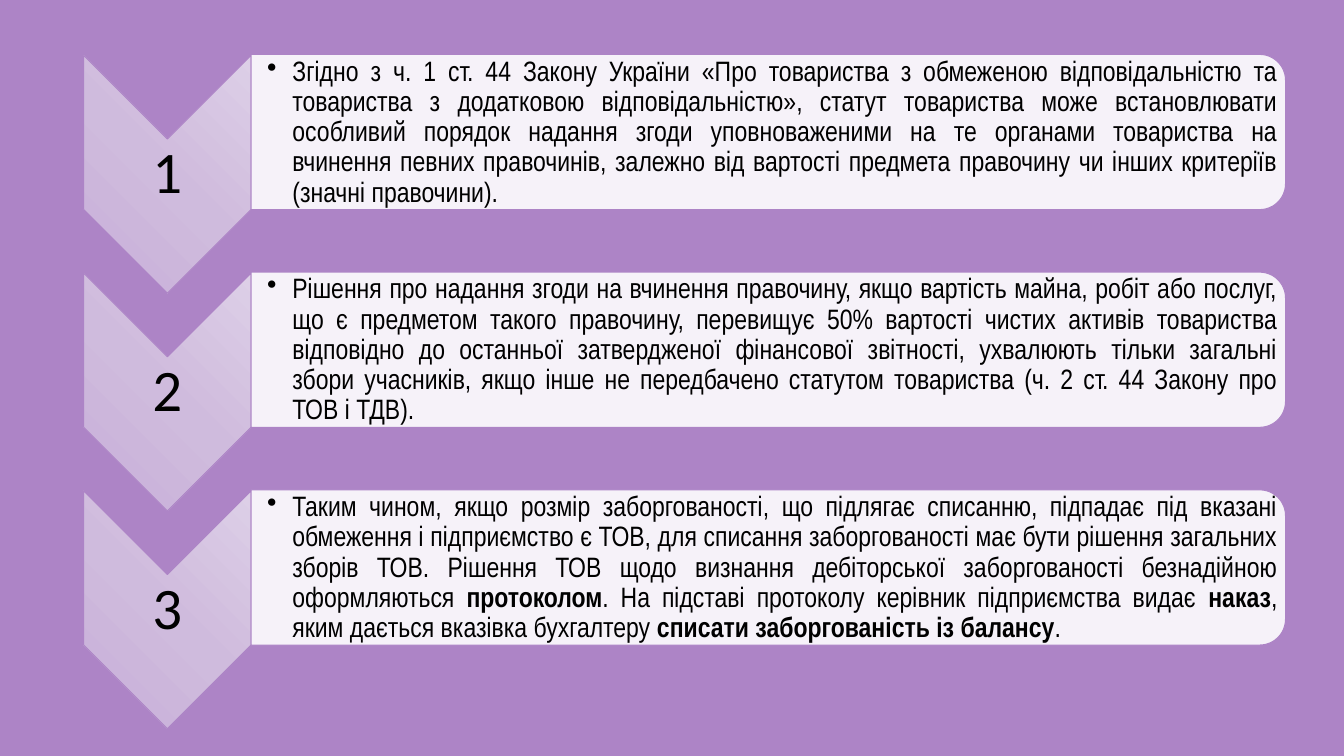
from dataclasses import dataclass

from lxml import etree
from pptx import Presentation
from pptx.dml.color import RGBColor
from pptx.enum.shapes import MSO_SHAPE as SHAPE
from pptx.enum.text import MSO_ANCHOR as ANCHOR, PP_ALIGN as ALIGN
from pptx.oxml.ns import qn
from pptx.shapes.autoshape import Shape
from pptx.slide import Slide
from pptx.util import Inches, Pt

PURPLE = RGBColor(0xAD, 0x84, 0xC6)
WHITE = RGBColor(0xFF, 0xFF, 0xFF)
BLACK = RGBColor(0x00, 0x00, 0x00)
CHEVRON_STOPS = (
    (0, RGBColor(0xDD, 0xCF, 0xE7)),
    (50, RGBColor(0xCF, 0xBB, 0xDD)),
    (100, RGBColor(0xC8, 0xAF, 0xD9)),
)
ROW_PITCH = 2.16
BOLD_MARK = "**"


@dataclass(frozen=True)
class Box:
    left: float
    top: float
    width: float
    height: float

    def emu(self, shift: float) -> tuple[int, int, int, int]:
        return (Inches(self.left), Inches(self.top + shift),
                Inches(self.width), Inches(self.height))


@dataclass(frozen=True)
class Step:
    number: str
    body: str


CHEVRON = Box(0.48, 0.9, 2.36, 1.66)
NUMBER = Box(0.83, 1.38, 1.66, 0.71)
PANEL = Box(6.85, -3.82, 1.54, 10.26)
BODY = Box(2.49, 0.62, 10.19, 1.39)

STEPS = (
    Step("1", "Згідно з ч. 1 ст. 44 Закону України «Про товариства з обмеженою "
              "відповідальністю та товариства з додатковою відповідальністю», статут "
              "товариства може встановлювати особливий порядок надання згоди "
              "уповноваженими на те органами товариства на вчинення певних правочинів, "
              "залежно від вартості предмета правочину чи інших критеріїв "
              "(значні правочини). "),
    Step("2", "Рішення про надання згоди на вчинення правочину, якщо вартість "
              "майна, робіт або послуг, що є предметом такого правочину, перевищує 50% "
              "вартості чистих активів товариства відповідно до останньої затвердженої "
              "фінансової звітності, ухвалюють тільки загальні збори учасників, якщо "
              "інше не передбачено статутом товариства (ч. 2 ст. 44 Закону про ТОВ і ТДВ)."),
    Step("3", "Таким чином, якщо розмір заборгованості, що підлягає списанню, "
              "підпадає під вказані обмеження і підприємство є ТОВ, для списання "
              "заборгованості має бути рішення загальних зборів ТОВ. Рішення ТОВ щодо "
              "визнання дебіторської заборгованості безнадійною оформляються "
              "**протоколом**. На підставі протоколу керівник підприємства видає "
              "**наказ**, яким дається вказівка бухгалтеру "
              "**списати заборгованість із балансу**. "),
)


def add_turned_shape(s: Slide, kind: SHAPE, box: Box, shift: float) -> Shape:
    sp = s.shapes.add_shape(kind, *box.emu(shift))
    sp.rotation = 90
    sp.shadow.inherit = False
    sp.line.color.rgb = PURPLE
    sp.line.width = Pt(0.75)
    return sp


def add_chevron(s: Slide, shift: float) -> None:
    sp = add_turned_shape(s, SHAPE.CHEVRON, CHEVRON, shift)
    sp.fill.gradient()
    grad = sp._element.spPr.find(qn("a:gradFill"))
    stops = grad.find(qn("a:gsLst"))
    for stop in list(stops):
        stops.remove(stop)
    for percent, color in CHEVRON_STOPS:
        stop = etree.SubElement(stops, qn("a:gs"), pos=str(percent * 1000))
        etree.SubElement(stop, qn("a:srgbClr"), val=str(color))
    sp.fill.gradient_angle = 315


def add_panel(s: Slide, shift: float) -> None:
    sp = add_turned_shape(s, SHAPE.ROUND_2_SAME_RECTANGLE, PANEL, shift)
    sp.fill.solid()
    sp.fill.fore_color.rgb = WHITE
    color = sp._element.spPr.find(qn("a:solidFill")).find(qn("a:srgbClr"))
    etree.SubElement(color, qn("a:alpha"), val="90000")


def add_text(s: Slide, box: Box, shift: float, left_inset: float, inset: float):
    tf = s.shapes.add_textbox(*box.emu(shift)).text_frame
    tf.word_wrap = True
    tf.vertical_anchor = ANCHOR.MIDDLE
    tf.margin_left = Inches(left_inset)
    tf.margin_top = tf.margin_right = tf.margin_bottom = Inches(inset)
    p = tf.paragraphs[0]
    p.line_spacing = 0.9
    p.font.color.rgb = BLACK
    return p


def add_number(s: Slide, number: str, shift: float) -> None:
    p = add_text(s, NUMBER, shift, 0.03, 0.03)
    p.text = number
    p.alignment = ALIGN.CENTER
    font = p.runs[0].font
    font.name, font.size, font.color.rgb = "Calibri", Pt(42), BLACK


def add_body(s: Slide, body: str, shift: float) -> None:
    p = add_text(s, BODY, shift, 0.16, 0.01)
    p.alignment = ALIGN.JUSTIFY
    p.level = 1
    pPr = p._p.get_or_add_pPr()
    pPr.set("marL", str(Inches(0.25)))
    pPr.set("indent", str(Inches(-0.25)))
    bullet = etree.Element(qn("a:buChar"), char="•")
    pPr.find(qn("a:lnSpc")).addnext(bullet)
    for i, part in enumerate(body.split(BOLD_MARK)):
        r = p.add_run()
        r.text = part
        font = r.font
        font.name, font.size, font.color.rgb = "Arial Narrow", Pt(20), BLACK
        font.bold = i % 2 == 1


def main() -> None:
    prs = Presentation()
    prs.slide_width, prs.slide_height = Inches(13.33), Inches(7.5)
    s = prs.slides.add_slide(prs.slide_layouts[6])
    s.background.fill.solid()
    s.background.fill.fore_color.rgb = PURPLE
    for i, step in enumerate(STEPS):
        shift = i * ROW_PITCH
        add_chevron(s, shift)
        add_number(s, step.number, shift)
        add_panel(s, shift)
        add_body(s, step.body, shift)
    prs.save("out.pptx")


if __name__ == "__main__":
    main()
